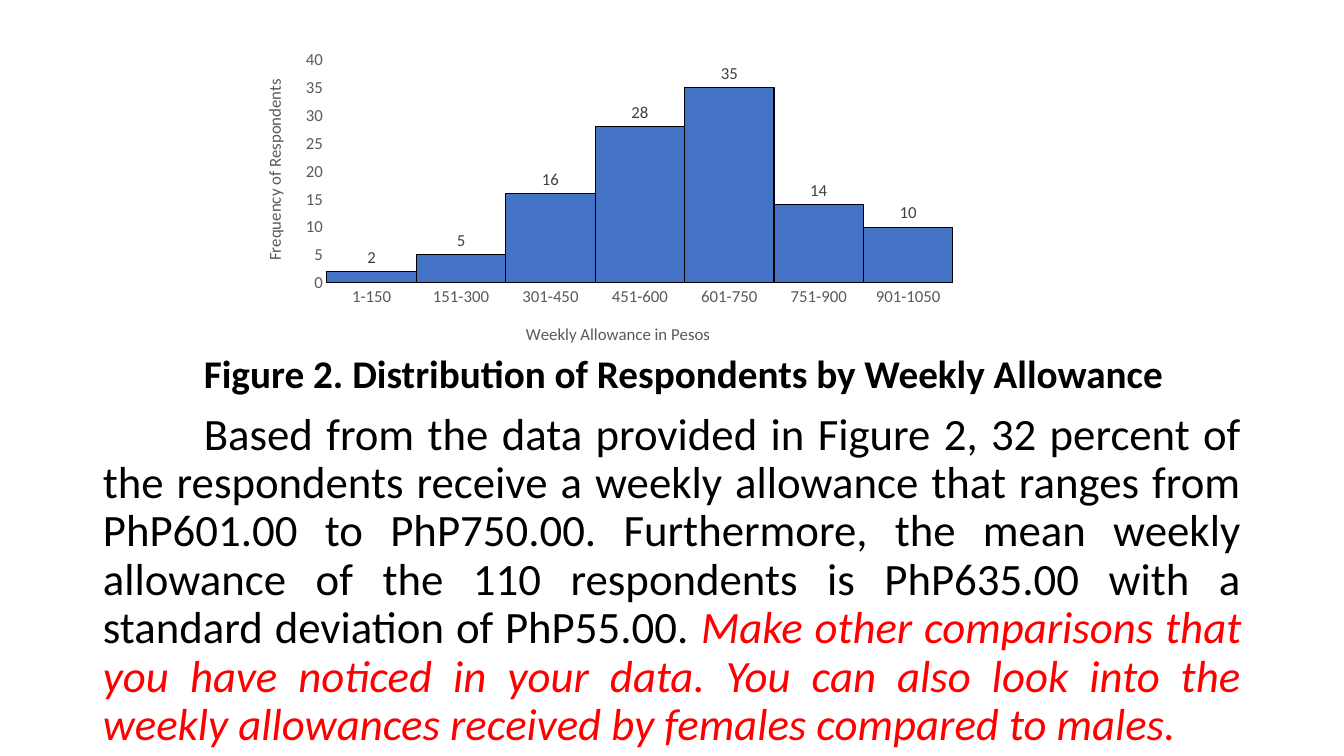
"""Build a slide with a weekly allowance histogram and its discussion."""
import pptx
import pptx.chart.data
import pptx.dml.color
import pptx.enum.chart
import pptx.enum.text
import pptx.oxml
import pptx.oxml.ns
import pptx.util

EMU_PER_PX = 914400 / 100.8
FONT = "Calibri"
COLORS = {
    "ink": "000000",
    "accent": "FF0000",
    "bar": "4472C4",
    "axis": "D9D9D9",
    "axis_text": "595959",
    "label": "404040",
}
ALLOWANCES = {
    "1-150": 2,
    "151-300": 5,
    "301-450": 16,
    "451-600": 28,
    "601-750": 35,
    "751-900": 14,
    "901-1050": 10,
}
CHART_BOX = (234, 43, 735, 322)
PLOT_BOX = (327, 60, 626, 223)
CAPTION = "Figure 2. Distribution of Respondents by Weekly Allowance"
FINDINGS = (
    "Based from the data provided in Figure 2, 32 percent of the respondents "
    "receive a weekly allowance that ranges from PhP601.00 to PhP750.00. "
    "Furthermore, the mean weekly allowance of the 110 respondents is "
    "PhP635.00 with a standard deviation of PhP55.00. "
)
ADVICE = (
    "Make other comparisons that you have noticed in your data. You can also "
    "look into the weekly allowances received by females compared to males."
)


def px(length):
    """Turn pixels into EMU."""
    return pptx.util.Emu(round(length * EMU_PER_PX))


def color(name):
    """Return the named colour."""
    return pptx.dml.color.RGBColor.from_string(COLORS[name])


def style_font(font, size, color_name, bold=False, italic=False):
    """Set the face, size, colour and style of a font."""
    font.name = FONT
    font.size = pptx.util.Pt(size)
    font.color.rgb = color(color_name)
    font.bold = bold
    font.italic = italic


def style_line(line, color_name):
    """Give a line its colour and a thin width."""
    line.color.rgb = color(color_name)
    line.width = pptx.util.Pt(0.75)


def add_span(para, text, size, color_name="ink", bold=False, italic=False):
    """Add one styled run to a paragraph."""
    span = para.add_run()
    span.text = text
    style_font(span.font, size, color_name, bold, italic)


def format_para(para, space_before):
    """Justify a paragraph and indent its first line."""
    para.alignment = pptx.enum.text.PP_ALIGN.JUSTIFY
    para.line_spacing = 0.9
    para.space_before = pptx.util.Pt(space_before)
    para._p.get_or_add_pPr().set("indent", str(px(101)))


def place(parent, index, left, top, width=None, height=None):
    """Fix the position of a chart part, given in page pixels."""
    for old in parent.findall(pptx.oxml.ns.qn("c:layout")):
        parent.remove(old)
    chart_left, chart_top, chart_width, chart_height = CHART_BOX
    fractions = {
        "x": (left - chart_left) / chart_width,
        "y": (top - chart_top) / chart_height,
    }
    target = ""
    if width:
        target = '<c:layoutTarget val="inner"/>'
        fractions["w"] = width / chart_width
        fractions["h"] = height / chart_height
    modes = "".join(f'<c:{key}Mode val="edge"/>' for key in "xy")
    values = "".join(f'<c:{key} val="{part:.4f}"/>' for key, part in fractions.items())
    namespace = pptx.oxml.ns.nsdecls("c")
    layout = pptx.oxml.parse_xml(
        f"<c:layout {namespace}><c:manualLayout>{target}{modes}{values}"
        "</c:manualLayout></c:layout>"
    )
    parent.insert(index, layout)


def style_axis(axis, title, left, top):
    """Style an axis and place its title."""
    axis.has_major_gridlines = False
    axis.major_tick_mark = pptx.enum.chart.XL_TICK_MARK.NONE
    style_font(axis.tick_labels.font, 12, "axis_text")
    para = axis.axis_title.text_frame.paragraphs[0]
    add_span(para, title, 12, "axis_text")
    place(axis.axis_title._element, 1, left, top)


def add_histogram(page):
    """Add the column chart of respondents by allowance."""
    data = pptx.chart.data.CategoryChartData()
    data.categories = list(ALLOWANCES)
    data.add_series("Series 1", list(ALLOWANCES.values()))
    kind = pptx.enum.chart.XL_CHART_TYPE.COLUMN_CLUSTERED
    chart = page.shapes.add_chart(kind, *map(px, CHART_BOX), data).chart
    style_font(chart.font, 10, "ink")
    chart.has_legend = False
    chart.has_title = False

    plot = chart.plots[0]
    plot.gap_width = 0
    plot.vary_by_categories = False
    bars = plot.series[0]
    bars.format.fill.solid()
    bars.format.fill.fore_color.rgb = color("bar")
    style_line(bars.format.line, "ink")
    labels = bars.data_labels
    labels.show_value = True
    labels.position = pptx.enum.chart.XL_LABEL_POSITION.OUTSIDE_END
    style_font(labels.font, 12, "label")

    style_axis(chart.category_axis, "Weekly Allowance in Pesos", 523, 320)
    style_line(chart.category_axis.format.line, "axis")
    style_axis(chart.value_axis, "Frequency of Respondents", 260, 76)
    chart.value_axis.format.line.fill.background()
    chart.value_axis.minimum_scale = 0
    chart.value_axis.maximum_scale = 40
    chart.value_axis.major_unit = 5
    place(chart._chartSpace.chart.plotArea, 0, *PLOT_BOX)


def add_discussion(page):
    """Add the figure caption and the paragraph below it."""
    box = page.shapes.add_textbox(px(93), px(350), px(1159), px(406))
    frame = box.text_frame
    frame.word_wrap = True
    caption = frame.paragraphs[0]
    format_para(caption, 0)
    add_span(caption, CAPTION, 28, bold=True)
    findings = frame.add_paragraph()
    format_para(findings, 10)
    add_span(findings, FINDINGS, 32)
    add_span(findings, ADVICE, 32, "accent", italic=True)


def main():
    """Build and save the deck."""
    deck = pptx.Presentation()
    deck.slide_width = px(1344)
    deck.slide_height = px(756)
    page = deck.slides.add_slide(deck.slide_layouts[6])
    add_discussion(page)
    add_histogram(page)
    deck.save("out.pptx")


if __name__ == "__main__":
    main()
